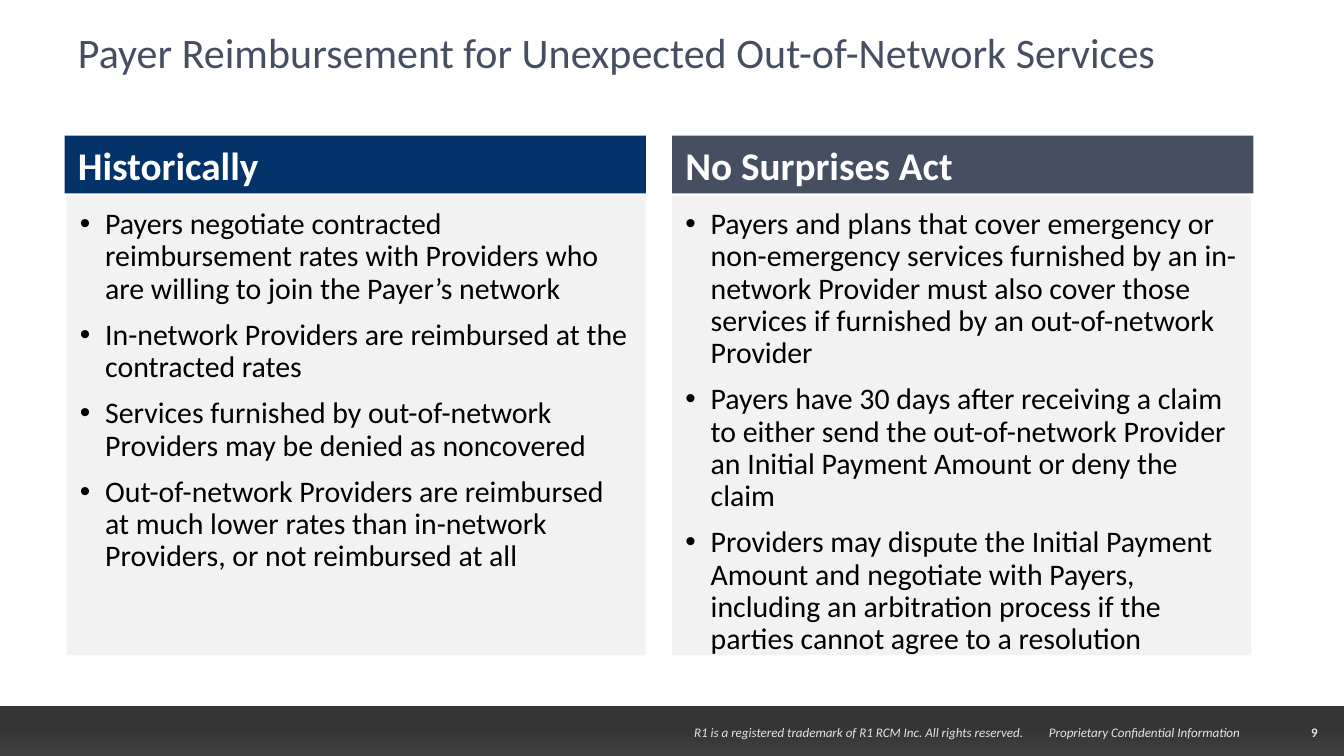
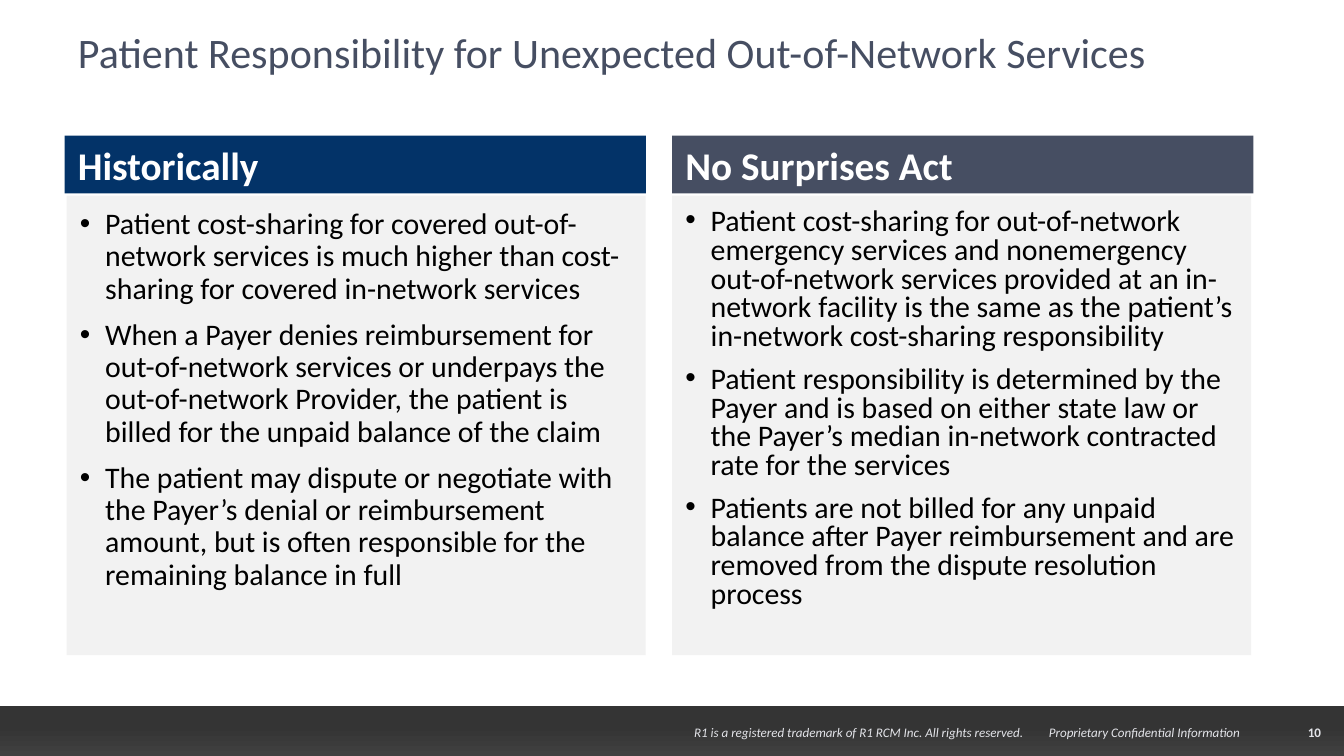
import copy

import pptx
import pptx.dml.color
import pptx.enum.shapes
import pptx.enum.text
import pptx.oxml.ns
import pptx.util
from lxml import etree

# The slide is a grid of square cells, 100 columns by 56.25 rows.
COLUMNS, ROWS = 100, 56.25
CELL = 0.1
COMPARISON_LAYOUT = 4
FIRST_PAGE_NUMBER = 9

COLOURS = {
    "navy": "033368",
    "slate": "464E62",
    "panel": "F2F2F2",
    "text": "000000",
    "white": "FFFFFF",
    "footer": "E3E4E9",
}
BAND_STOPS = [(0, "343434"), (0.5, "363636"), (1, "404040")]

FORMATS = {
    "title": {"size": 22.5, "colour": "slate", "bold": False, "italic": False},
    "heading": {"size": 21, "colour": "white", "bold": True, "italic": False},
    "bullet": {"size": 16, "colour": "text", "bold": False, "italic": False},
    "footer": {"size": 7, "colour": "footer", "bold": False, "italic": True},
    "number": {"size": 7, "colour": "footer", "bold": True, "italic": False},
}

# Boxes are left, top, width, height in grid cells.
TITLE_BOX = (4.8, 0.85, 90.4, 6)
FOOTER_BOX = (0, 52.55, COLUMNS, ROWS - 52.55)
HEADING_HEIGHT, PANEL_TOP, PANEL_WIDTH = 4.3, 4.45, 43.1
BULLET_INDENT = 1.88
COLUMN_STYLES = [
    {"heading": "Historically", "colour": "navy",
     "box": (4.8, 10.1, 43.25, 38.65), "panel_shift": 0.15},
    {"heading": "No Surprises Act", "colour": "slate",
     "box": (50, 10.1, 43.25, 38.65), "panel_shift": 0},
]

FOOTER_TEXT = ("R1 is a registered trademark of R1 RCM Inc. All rights reserved."
               "\tProprietary Confidential Information")

PAGES = [
    {
        "title": "Payer Reimbursement for Unexpected Out-of-Network Services",
        "line_spacing": (0.9, 0.9),
        "lists": (
            [
                "Payers negotiate contracted reimbursement rates with Providers who "
                "are willing to join the Payer’s network",
                "In-network Providers are reimbursed at the contracted rates",
                "Services furnished by out-of-network Providers may be denied as "
                "noncovered",
                "Out-of-network Providers are reimbursed at much lower rates than "
                "in-network Providers, or not reimbursed at all",
            ],
            [
                "Payers and plans that cover emergency or non-emergency services "
                "furnished by an in-network Provider must also cover those services "
                "if furnished by an out-of-network Provider",
                "Payers have 30 days after receiving a claim to either send the "
                "out-of-network Provider an Initial Payment Amount or deny the claim",
                "Providers may dispute the Initial Payment Amount and negotiate with "
                "Payers, including an arbitration process if the parties cannot agree "
                "to a resolution",
            ],
        ),
    },
    {
        "title": "Patient Responsibility for Unexpected Out-of-Network Services",
        "line_spacing": (0.9, 0.8),
        "lists": (
            [
                "Patient cost-sharing for covered out-of-network services is much "
                "higher than cost-sharing for covered in-network services",
                "When a Payer denies reimbursement for out-of-network services or "
                "underpays the out-of-network Provider, the patient is billed for the "
                "unpaid balance of the claim",
                "The patient may dispute or negotiate with the Payer’s denial or "
                "reimbursement amount, but is often responsible for the remaining "
                "balance in full",
            ],
            [
                "Patient cost-sharing for out-of-network emergency services and "
                "nonemergency out-of-network services provided at an in-network "
                "facility is the same as the patient’s in-network cost-sharing "
                "responsibility",
                "Patient responsibility is determined by the Payer and is based on "
                "either state law or the Payer’s median in-network contracted rate "
                "for the services",
                "Patients are not billed for any unpaid balance after Payer "
                "reimbursement and are removed from the dispute resolution process",
            ],
        ),
    },
]


def cells(count):
    return pptx.util.Inches(count * CELL)


def rgb(hex_string):
    return pptx.dml.color.RGBColor.from_string(hex_string)


def place(shape, box):
    for name, value in zip(("left", "top", "width", "height"), box):
        setattr(shape, name, cells(value))


def fill_solid(shape, colour):
    shape.fill.solid()
    shape.fill.fore_color.rgb = rgb(COLOURS[colour])


def set_frame(shape, anchor="MIDDLE", **margins):
    """Set wrapping, anchor and margins, the margins in grid cells."""
    frame = shape.text_frame
    settings = {
        "word_wrap": True,
        "auto_size": pptx.enum.text.MSO_AUTO_SIZE.NONE,
        "vertical_anchor": pptx.enum.text.MSO_ANCHOR[anchor],
    }
    sides = {"left": 1, "right": 1, "top": 0.5, "bottom": 0.5, **margins}
    settings.update({f"margin_{side}": cells(gap) for side, gap in sides.items()})
    for name, value in settings.items():
        setattr(frame, name, value)
    return frame


def write(para, text, style, align="LEFT"):
    look = FORMATS[style]
    span = para.add_run()
    span.text = text
    para.alignment = pptx.enum.text.PP_ALIGN[align]
    font = {"name": "Calibri", "size": pptx.util.Pt(look["size"]),
            "bold": look["bold"], "italic": look["italic"]}
    for name, value in font.items():
        setattr(span.font, name, value)
    span.font.color.rgb = rgb(COLOURS[look["colour"]])


def add_bullet(para):
    properties = para._p.get_or_add_pPr()
    properties.set("marL", str(cells(BULLET_INDENT)))
    properties.set("indent", str(cells(-BULLET_INDENT)))
    etree.SubElement(properties, pptx.oxml.ns.qn("a:buChar"), char="•")


def add_tab_stop(para, position):
    properties = para._p.get_or_add_pPr()
    stops = etree.SubElement(properties, pptx.oxml.ns.qn("a:tabLst"))
    etree.SubElement(stops, pptx.oxml.ns.qn("a:tab"),
                     pos=str(cells(position)), algn="l")


def draw_title(page, text, box):
    title = page.shapes.title
    place(title, box)
    write(set_frame(title).paragraphs[0], text, "title")


def draw_column(heading, panel, style, points, line_spacing):
    """Fill a heading bar and the bulleted panel below it."""
    left, top, width, height = style["box"]
    place(heading, (left, top, width, HEADING_HEIGHT))
    fill_solid(heading, style["colour"])
    write(set_frame(heading).paragraphs[0], style["heading"], "heading")

    place(panel, (left + style["panel_shift"], top + PANEL_TOP,
                  PANEL_WIDTH, height - PANEL_TOP))
    fill_solid(panel, "panel")
    frame = set_frame(panel, anchor="TOP", top=1, bottom=1)
    for index, point in enumerate(points):
        para = frame.add_paragraph() if index else frame.paragraphs[0]
        add_bullet(para)
        para.line_spacing = line_spacing
        para.space_before = pptx.util.Pt(7.5 if index else 0)
        write(para, point, "bullet")


def draw_footer(page, number, box):
    left, top, width, height = box
    band = page.shapes.add_shape(
        pptx.enum.shapes.MSO_SHAPE.RECTANGLE, *(cells(value) for value in box))
    band.shadow.inherit = False
    band.line.fill.background()
    band.fill.gradient()
    band.fill.gradient_angle = 270
    stops = band._element.spPr.find(".//" + pptx.oxml.ns.qn("a:gsLst"))
    stops.insert(1, copy.deepcopy(stops[0]))
    for stop, (position, colour) in zip(band.fill.gradient_stops, BAND_STOPS):
        stop.position = position
        stop.color.rgb = rgb(colour)

    def add_label(label_box):
        return page.shapes.add_textbox(*(cells(value) for value in label_box))

    number_label = add_label((left + width - 4.05, top + 1.1, 3.7, 1.7))
    frame = set_frame(number_label, left=0, right=0)
    write(frame.paragraphs[0], str(number), "number", align="CENTER")

    notice_label = add_label((left + 48.5, top + 1, 48.3, 1.9))
    notice = set_frame(notice_label, left=3.15).paragraphs[0]
    add_tab_stop(notice, 26.4)
    write(notice, FOOTER_TEXT, "footer")


def build_page(deck, content, number):
    page = deck.slides.add_slide(deck.slide_layouts[COMPARISON_LAYOUT])
    draw_footer(page, number, FOOTER_BOX)
    draw_title(page, content["title"], TITLE_BOX)
    bodies = [holder for holder in page.placeholders
              if holder.placeholder_format.idx > 0]
    for heading, panel, style, points, spacing in zip(
            bodies[::2], bodies[1::2], COLUMN_STYLES,
            content["lists"], content["line_spacing"]):
        draw_column(heading, panel, style, points, spacing)


def main():
    deck = pptx.Presentation()
    deck.slide_width = cells(COLUMNS)
    deck.slide_height = cells(ROWS)
    for number, content in enumerate(PAGES, FIRST_PAGE_NUMBER):
        build_page(deck, content, number)
    deck.save("out.pptx")


if __name__ == "__main__":
    main()
